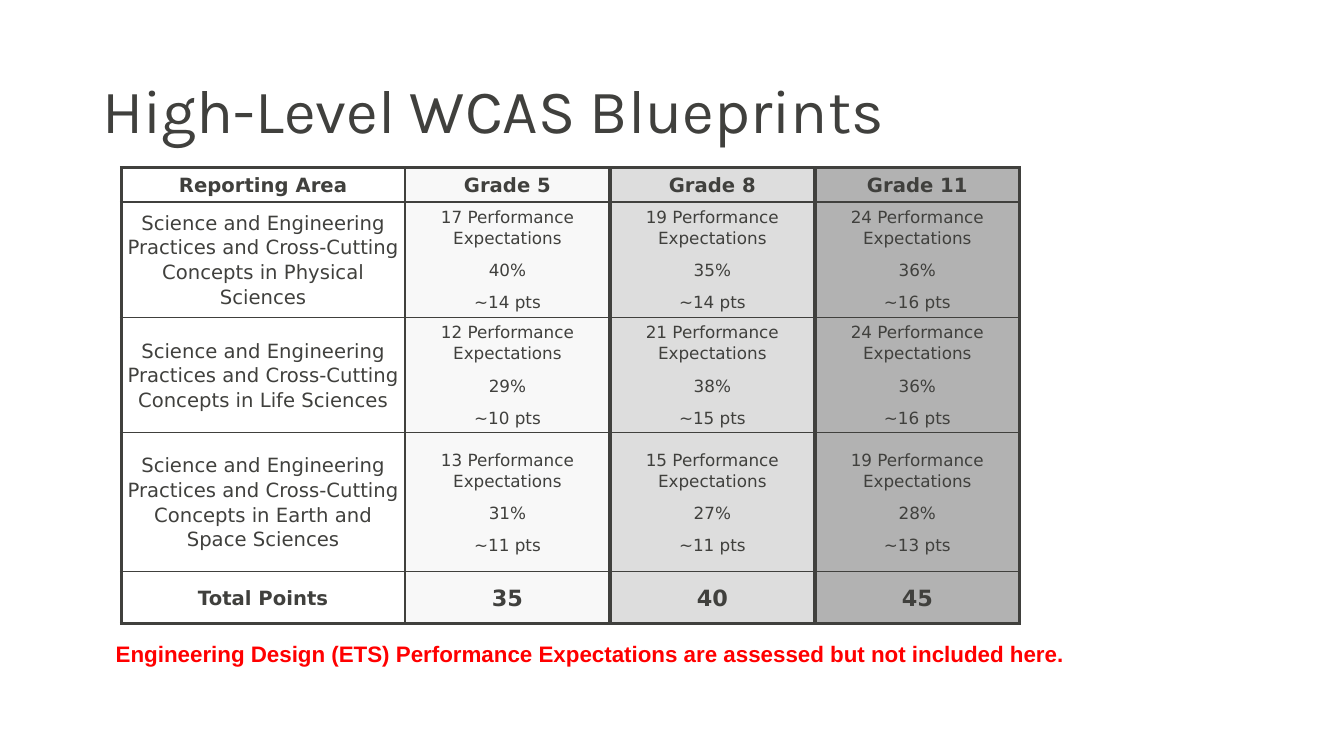
from dataclasses import dataclass

from lxml import etree
from pptx import Presentation
from pptx.dml.color import RGBColor
from pptx.enum.text import MSO_ANCHOR, PP_ALIGN
from pptx.oxml.ns import qn
from pptx.util import Pt

LEFT, CENTER = PP_ALIGN.LEFT, PP_ALIGN.CENTER
MIDDLE, TOP = MSO_ANCHOR.MIDDLE, MSO_ANCHOR.TOP
TITLE_ONLY = 5


@dataclass(frozen=True)
class Theme:
    """Colours, fonts and type sizes of the slide."""
    ink: str = "40403D"
    alert: str = "FF0000"
    fills: tuple = (None, "F8F8F8", "DDDDDD", "B2B2B2")
    head_font: str = "Karla"
    grid_font: str = "DejaVu Sans"
    note_font: str = "Arial"
    head: int = 44
    label: int = 14
    body: int = 12
    total: int = 16
    note: int = 16


THEME = Theme()
AREA = "Science and Engineering Practices and Cross-Cutting Concepts in "
GRADES = ("Grade 5", "Grade 8", "Grade 11")
AREAS = (
    ("Physical Sciences", ((17, 40, 14), (19, 35, 14), (24, 36, 16))),
    ("Life Sciences", ((12, 29, 10), (21, 38, 15), (24, 36, 16))),
    ("Earth and Space Sciences", ((13, 31, 11), (15, 27, 11), (19, 28, 13))),
)
TOTALS = ("35", "40", "45")
WIDTHS = (202.68, 146.4, 146.4, 146.4)
HEIGHTS = (24.5, 82.5, 82.5, 99.2, 37.2)
COL_LINES = (2.25, 2.25, 3, 3, 2.25)
ROW_LINES = (2.25, 2.25, 1, 1, 1, 2.25)


def write(frame, lines, font, para):
    """Fill a text frame with lines in one font and paragraph format."""
    for i, line in enumerate(lines):
        p = frame.paragraphs[0] if i == 0 else frame.add_paragraph()
        run = p.add_run()
        run.text = line
        for key, value in para.items():
            setattr(p, key, value)
        for key, value in font.items():
            if key == "color":
                run.font.color.rgb = RGBColor.from_string(value)
            else:
                setattr(run.font, key, value)


def place(shape, left, top, width, height):
    """Set a shape's box in points."""
    box = {"left": left, "top": top, "width": width, "height": height}
    for key, value in box.items():
        setattr(shape, key, Pt(value))


def edge(cell, lines):
    """Draw the cell borders, given as widths in points by side."""
    props = cell._tc.get_or_add_tcPr()
    for i, (side, width) in enumerate(lines.items()):
        line = etree.Element(qn("a:ln" + side), w=str(Pt(width)))
        fill = etree.SubElement(line, qn("a:solidFill"))
        etree.SubElement(fill, qn("a:srgbClr"), val=THEME.ink)
        props.insert(i, line)


def style(cell, row, col):
    """Set a cell's margins, fill and borders from its place in the grid."""
    side = Pt(5.4) if col > 1 and 0 < row < len(HEIGHTS) - 1 else Pt(1.4)
    form = {"margin_left": side, "margin_right": side, "margin_top": 0,
            "margin_bottom": 0, "vertical_anchor": MIDDLE}
    for key, value in form.items():
        setattr(cell, key, value)
    if THEME.fills[col]:
        cell.fill.solid()
        cell.fill.fore_color.rgb = RGBColor.from_string(THEME.fills[col])
    else:
        cell.fill.background()
    edge(cell, {"L": COL_LINES[col], "R": COL_LINES[col + 1],
                "T": ROW_LINES[row], "B": ROW_LINES[row + 1]})


def get_rows():
    """Return the table's text as rows of cells, each a list of lines."""
    rows = [[[text] for text in ("Reporting Area", *GRADES)]]
    for name, stats in AREAS:
        rows.append([[AREA + name]] + [
            [f"{count} Performance Expectations", f"{share}%", f"~{pts} pts"]
            for count, share, pts in stats])
    rows.append([[text] for text in ("Total Points", *TOTALS)])
    return rows


def add_title(slide, text):
    """Place and write the slide title."""
    title = slide.shapes.title
    place(title, 66, 28.8, 828, 104.4)
    title.text_frame.vertical_anchor = MIDDLE
    title.text_frame.word_wrap = True
    write(title.text_frame, [text],
          {"name": THEME.head_font, "size": Pt(THEME.head),
           "color": THEME.ink, "bold": False},
          {"alignment": LEFT, "line_spacing": 0.9})


def add_grid(slide):
    """Build the blueprint table."""
    rows = get_rows()
    last = len(rows) - 1
    table = slide.shapes.add_table(
        len(rows), len(WIDTHS), Pt(86.6), Pt(119.7),
        Pt(sum(WIDTHS)), Pt(sum(HEIGHTS))).table
    table.first_row = table.horz_banding = False
    for col, width in enumerate(WIDTHS):
        table.columns[col].width = Pt(width)
    for r, row in enumerate(rows):
        table.rows[r].height = Pt(HEIGHTS[r])
        bold = r in (0, last)
        for c, lines in enumerate(row):
            size = THEME.label
            if c and r:
                size = THEME.total if r == last else THEME.body
            cell = table.cell(r, c)
            style(cell, r, c)
            write(cell.text_frame, lines,
                  {"name": THEME.grid_font, "size": Pt(size),
                   "color": THEME.ink, "bold": bold},
                  {"alignment": CENTER, "line_spacing": 1.07,
                   "space_after": Pt(0 if bold else 8)})


def add_note(slide, text):
    """Add the note below the table."""
    box = slide.shapes.add_textbox(Pt(75.6), Pt(453.6), Pt(701.3), Pt(26.6))
    box.text_frame.word_wrap = True
    box.text_frame.vertical_anchor = TOP
    write(box.text_frame, [text],
          {"name": THEME.note_font, "size": Pt(THEME.note),
           "color": THEME.alert, "bold": True},
          {"alignment": LEFT})


def main():
    """Build and save the slide."""
    deck = Presentation()
    deck.slide_width, deck.slide_height = Pt(960), Pt(540)
    slide = deck.slides.add_slide(deck.slide_layouts[TITLE_ONLY])
    add_title(slide, "High-Level WCAS Blueprints")
    add_grid(slide)
    add_note(slide, "Engineering Design (ETS) Performance Expectations "
                    "are assessed but not included here.")
    deck.save("out.pptx")


if __name__ == "__main__":
    main()
